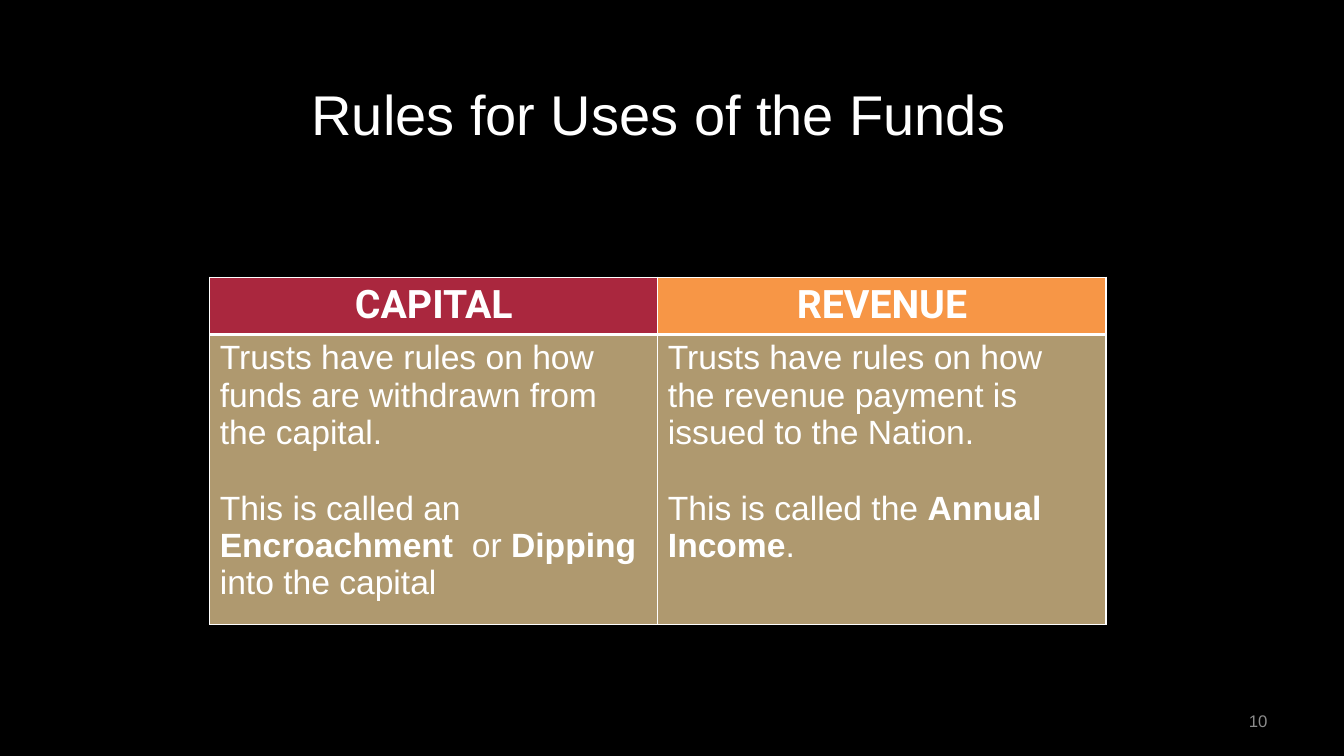
from lxml import etree
from pptx import Presentation
from pptx.dml.color import RGBColor
from pptx.enum import text
from pptx.oxml import ns
from pptx.util import Inches, Pt

# Content: each paragraph is a list of (words, bold) runs
TITLE = "Rules for Uses of the Funds"
PAGE_NUMBER = "10"
COLUMNS = [
    ("CAPITAL", "AA273E", [
        [("Trusts have rules on how funds are withdrawn from the capital.", False)],
        [("This is called an ", False), ("Encroachment", True), ("  or ", False),
         ("Dipping", True), (" into the capital", False)],
    ]),
    ("REVENUE", "F79646", [
        [("Trusts have rules on how the revenue payment is issued to the Nation.", False)],
        [("This is called the ", False), ("Annual Income", True), (".", False)],
    ]),
]
WHITE, BLACK, GREY, TAN = "FFFFFF", "000000", "8C8C8C", "AF996F"
COLUMN_WIDTH = 4.445
ROW_HEIGHTS = [0.56, 2.7]
THIN, THICK = 1, 3


def paint(color, value):
    color.rgb = RGBColor.from_string(value)


def style(paragraph, size, color=WHITE, name="Arial", align=text.PP_ALIGN.LEFT):
    paragraph.alignment = align
    paragraph.font.size = Pt(size)
    paragraph.font.name = name
    paint(paragraph.font.color, color)


def add_label(slide, words, left, top, width, height, size, color, align):
    frame = slide.shapes.add_textbox(*map(Inches, (left, top, width, height))).text_frame
    frame.word_wrap = True
    frame.vertical_anchor = text.MSO_ANCHOR.MIDDLE
    frame.text = words
    style(frame.paragraphs[0], size, color, align=align)


def format_cell(cell, fill, top, bottom):
    cell.fill.solid()
    paint(cell.fill.fore_color, fill)
    properties = cell._tc.get_or_add_tcPr()
    sides = [("a:lnL", THIN), ("a:lnR", THIN), ("a:lnT", top), ("a:lnB", bottom)]
    for position, (tag, points) in enumerate(sides):
        line = etree.Element(ns.qn(tag), w=str(Pt(points)))
        solid = etree.SubElement(line, ns.qn("a:solidFill"))
        etree.SubElement(solid, ns.qn("a:srgbClr"), val=WHITE)
        properties.insert(position, line)


# Slide and background
presentation = Presentation()
presentation.slide_width, presentation.slide_height = Inches(13.33), Inches(7.5)
slide = presentation.slides.add_slide(presentation.slide_layouts[6])
slide.background.fill.solid()
paint(slide.background.fill.fore_color, BLACK)

# Title and page number
add_label(slide, TITLE, 0.53, 0.5, 12, 1.25, 40, WHITE, text.PP_ALIGN.CENTER)
add_label(slide, PAGE_NUMBER, 9.56, 6.95, 3.11, 0.4, 12, GREY, text.PP_ALIGN.RIGHT)

# Table of fund rules
table = slide.shapes.add_table(
    len(ROW_HEIGHTS), len(COLUMNS), Inches(2.08), Inches(2.75),
    Inches(COLUMN_WIDTH * len(COLUMNS)), Inches(sum(ROW_HEIGHTS))).table
for row, height in zip(table.rows, ROW_HEIGHTS):
    row.height = Inches(height)

for index, (heading, fill, paragraphs) in enumerate(COLUMNS):
    table.columns[index].width = Inches(COLUMN_WIDTH)
    header, body = table.cell(0, index), table.cell(1, index)
    format_cell(header, fill, THIN, THICK)
    format_cell(body, TAN, THICK, THIN)

    header.text = heading
    paragraph = header.text_frame.paragraphs[0]
    style(paragraph, 28, name="Roboto", align=text.PP_ALIGN.CENTER)
    paragraph.font.bold = True

    for number, runs in enumerate(paragraphs):
        frame = body.text_frame
        paragraph = frame.add_paragraph() if number else frame.paragraphs[0]
        style(paragraph, 24)
        paragraph.space_before = Pt(27 if number else 0)
        for words, bold in runs:
            run = paragraph.add_run()
            run.text = words
            run.font.bold = bold

presentation.save("out.pptx")
